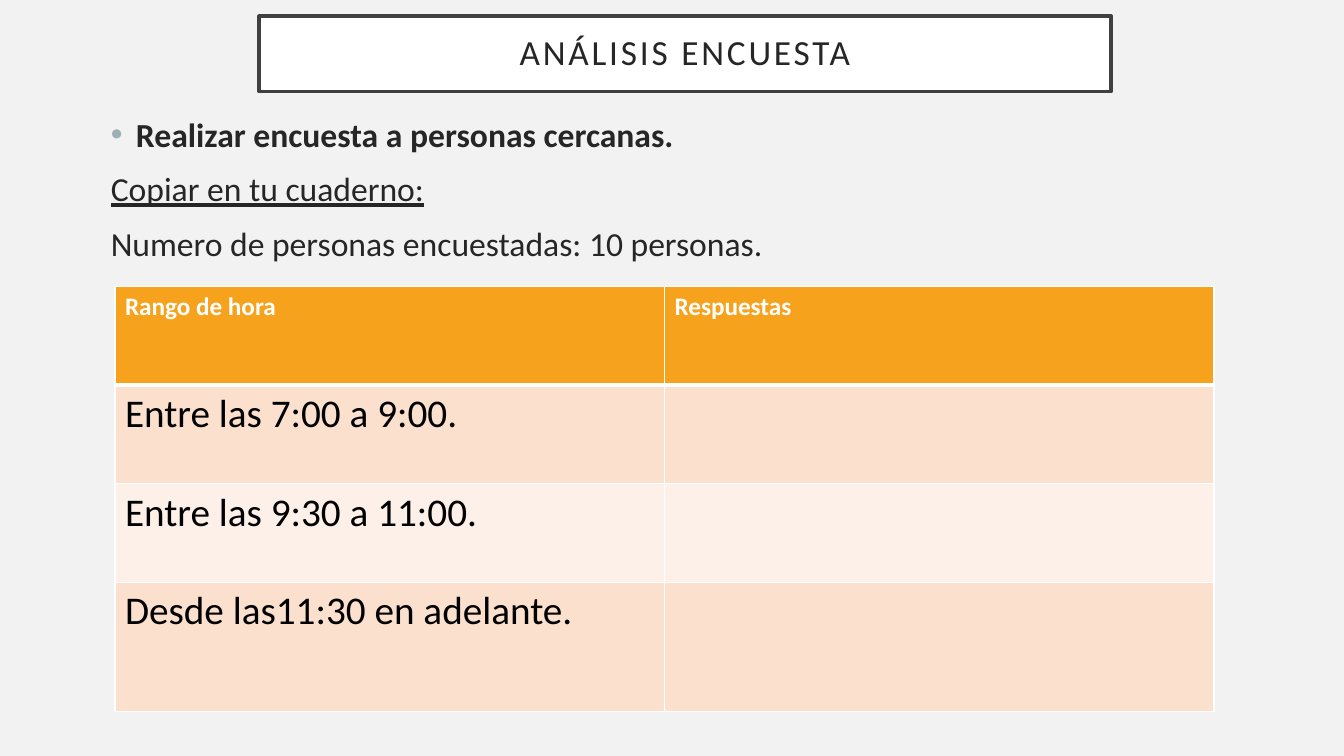
from dataclasses import dataclass

import pptx
import pptx.dml.color
import pptx.enum.text
import pptx.oxml
import pptx.oxml.ns
import pptx.util

PX = 9144  # EMU; 100 px to the inch
TITLE_ONLY = 5


@dataclass(frozen=True)
class Theme:
    font: str = "Calibri"
    background: str = "F2F2F2"
    white: str = "FFFFFF"
    black: str = "000000"
    frame: str = "404040"
    ink: str = "262626"
    bullet: str = "9BAFB5"
    header: str = "F6A21D"
    bands: tuple = ("FBE0CD", "FDF0E8")
    title_size: float = 25.2
    body_size: int = 24
    header_size: int = 18
    cell_size: int = 28
    frame_width: float = 2.5
    border_width: int = 1
    header_border_width: int = 3


THEME = Theme()


def px(*lengths):
    return [pptx.util.Emu(length * PX) for length in lengths]


def paint(fill, color):
    fill.solid()
    fill.fore_color.rgb = pptx.dml.color.RGBColor.from_string(color)


def set_font(para, size, color, bold=False):
    font = para.font
    font.name, font.size, font.bold = THEME.font, pptx.util.Pt(size), bold
    font.color.rgb = pptx.dml.color.RGBColor.from_string(color)


def xml(markup):
    head, tail = markup.split(" ", 1)
    return pptx.oxml.parse_xml(f"{head} {pptx.oxml.ns.nsdecls('a')} {tail}")


def add_title(page, box, text):
    title = page.shapes.title
    title.left, title.top, title.width, title.height = px(*box)
    paint(title.fill, THEME.white)
    paint(title.line.fill, THEME.frame)
    title.line.width = pptx.util.Pt(THEME.frame_width)
    frame = title.text_frame
    frame.text = text
    frame.word_wrap = True
    frame.auto_size = pptx.enum.text.MSO_AUTO_SIZE.NONE
    frame.vertical_anchor = pptx.enum.text.MSO_ANCHOR.MIDDLE
    for side in ("left", "top", "right", "bottom"):
        setattr(frame, f"margin_{side}", px(20)[0])
    para = frame.paragraphs[0]
    para.alignment = pptx.enum.text.PP_ALIGN.CENTER
    para.line_spacing = 0.9
    set_font(para, THEME.title_size, THEME.ink)
    para.runs[0].font._element.set("spc", "200")


def add_bullet(para, indent):
    properties = para._p.get_or_add_pPr()
    properties.set("marL", str(indent * PX))
    properties.set("indent", str(-indent * PX))
    marks = [
        xml(f'<a:buClr ><a:srgbClr val="{THEME.bullet}"/></a:buClr>'),
        xml('<a:buFont typeface="Arial"/>'),
        xml('<a:buChar char="•"/>'),
    ]
    properties.insert_element_before(marks[0], "a:buFont", "a:buChar", "a:defRPr")
    marks[0].addnext(marks[1])
    marks[1].addnext(marks[2])


def add_instructions(page, box, lines):
    frame = page.shapes.add_textbox(*px(*box)).text_frame
    frame.word_wrap = True
    frame.text = "\n".join(lines)
    for para in frame.paragraphs:
        para.space_before = pptx.util.Pt(10)
        set_font(para, THEME.body_size, THEME.ink)
    task, heading = frame.paragraphs[:2]
    task.font.bold = True
    add_bullet(task, 25)
    heading.font.underline = True


def set_borders(cell, top, bottom):
    """Draw the four white borders; the side ones have the usual width."""
    widths = {"L": THEME.border_width, "R": THEME.border_width, "T": top, "B": bottom}
    properties = cell._tc.get_or_add_tcPr()
    for index, (side, width) in enumerate(widths.items()):
        properties.insert(index, xml(
            f'<a:ln{side} w="{pptx.util.Pt(width)}"><a:solidFill>'
            f'<a:srgbClr val="{THEME.white}"/></a:solidFill></a:ln{side}>'))


def add_survey_table(page, box, row_heights, rows):
    table = page.shapes.add_table(len(rows), len(rows[0]), *px(*box)).table
    table.horz_banding = False
    for column in table.columns:
        column.width = px(box[2] // len(rows[0]))[0]
    thin, thick = THEME.border_width, THEME.header_border_width
    for index, (row, height, texts) in enumerate(zip(table.rows, px(*row_heights), rows)):
        row.height = height
        header = index == 0
        for cell, text in zip(row.cells, texts):
            cell.text = text
            para = cell.text_frame.paragraphs[0]
            if header:
                paint(cell.fill, THEME.header)
                set_font(para, THEME.header_size, THEME.white, bold=True)
            else:
                paint(cell.fill, THEME.bands[(index - 1) % 2])
                set_font(para, THEME.cell_size, THEME.black)
            set_borders(cell, thick if index == 1 else thin, thick if header else thin)


def add_survey_page(deck):
    page = deck.slides.add_slide(deck.slide_layouts[TITLE_ONLY])
    paint(page.background.fill, THEME.background)
    add_title(page, (257, 16, 845, 75), "ANÁLISIS ENCUESTA")
    add_instructions(page, (100, 108, 845, 397), [
        "Realizar encuesta a personas cercanas.",
        "Copiar en tu cuaderno:",
        "Numero de personas encuestadas: 10 personas.",
    ])
    add_survey_table(page, (114, 284, 1090, 422), (98, 98, 98, 128), [
        ("Rango de hora", "Respuestas"),
        ("Entre las 7:00 a 9:00.", ""),
        ("Entre las 9:30 a 11:00.", ""),
        ("Desde las11:30 en adelante.", ""),
    ])


def main():
    deck = pptx.Presentation()
    deck.slide_width, deck.slide_height = px(1333, 750)
    add_survey_page(deck)
    deck.save("out.pptx")


if __name__ == "__main__":
    main()
